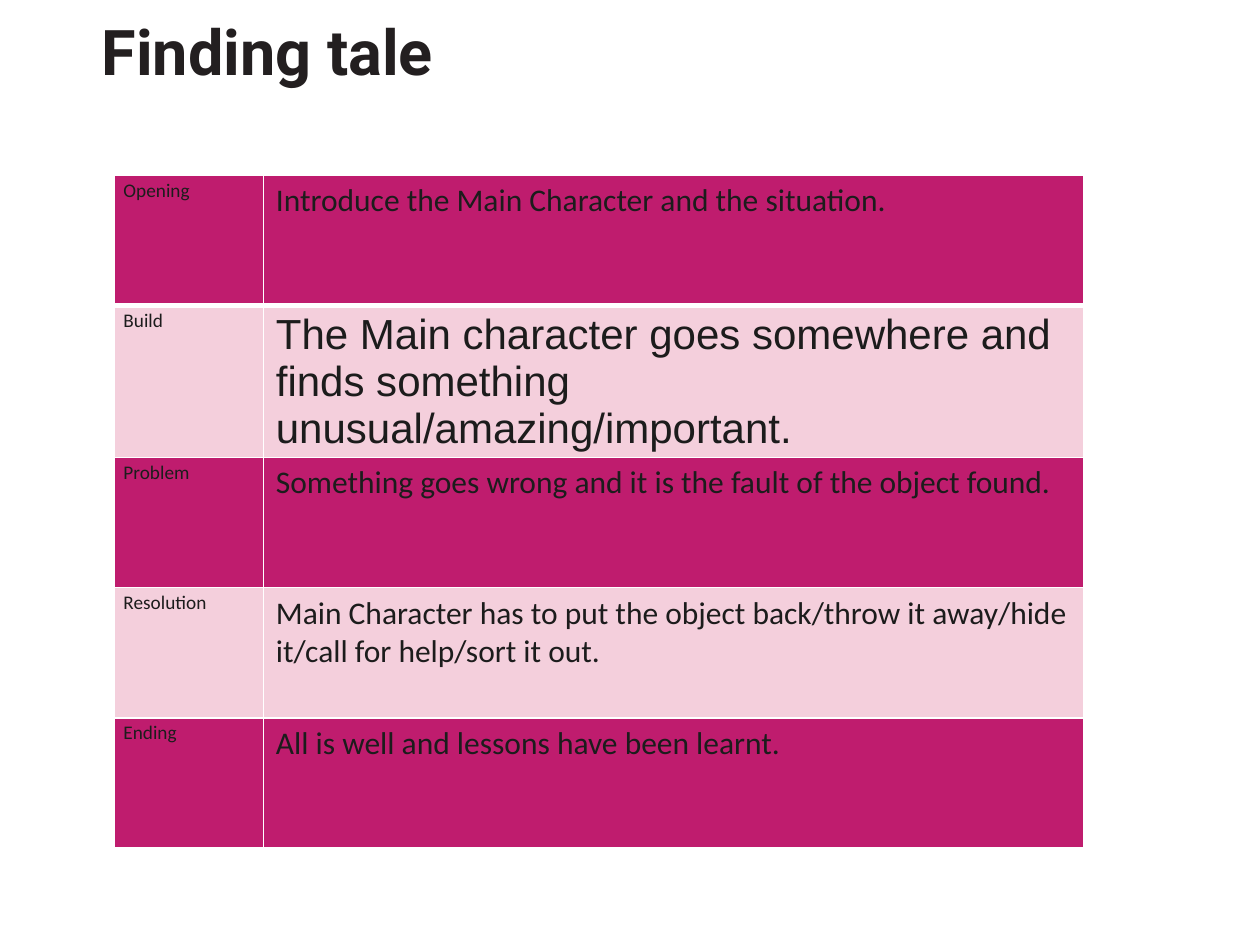
from lxml.etree import SubElement
from pptx import Presentation
from pptx.dml.color import RGBColor
from pptx.enum.shapes import MSO_SHAPE
from pptx.enum.text import MSO_ANCHOR, PP_ALIGN
from pptx.oxml.ns import qn
from pptx.util import Inches, Pt

PINK, PALE, INK, WHITE = "BF1C6E", "F4CFDC", "1C1C1C", "FFFFFF"
STAGES = [
    ("Opening", "Introduce the Main Character and the situation."),
    ("Build", "The Main character goes somewhere and finds something unusual/amazing/important."),
    ("Problem", "Something goes wrong and it is the fault of the object found."),
    ("Resolution", "Main Character has to put the object back/throw it away/hide it/call for help/sort it out."),
    ("Ending", "All is well and lessons have been learnt."),
]


def paint(font, size, name, tint, bold=False):
    font.size, font.name, font.bold = Pt(size), name, bold
    font.color.rgb = RGBColor.from_string(tint)


def edge(cell, low):
    props = cell._tc.get_or_add_tcPr()
    for side, width in (("L", 1), ("R", 1), ("T", 1), ("B", low)):
        line = SubElement(props, qn("a:ln" + side), w=str(Pt(width)))
        fill = SubElement(line, qn("a:solidFill"))
        SubElement(fill, qn("a:srgbClr"), val=WHITE)


def title(slide, box, text):
    shape = slide.shapes.add_shape(MSO_SHAPE.ROUNDED_RECTANGLE, *map(Inches, box))
    shape.adjustments[0] = 0.1
    shape.shadow.inherit = False
    shape.fill.background()
    shape.line.fill.background()
    frame = shape.text_frame
    frame.word_wrap = True
    frame.vertical_anchor = MSO_ANCHOR.MIDDLE
    frame.margin_left = frame.margin_right = Inches(0.25)
    frame.margin_top = frame.margin_bottom = Inches(0.25)
    para = frame.paragraphs[0]
    para.text, para.line_spacing = text, 0.9
    para.alignment = PP_ALIGN.LEFT
    paint(para.font, 36, "Roboto", "231F20", True)


def story(slide, box, stages):
    left, top, width, height = box
    grid = slide.shapes.add_table(len(stages), 2, *map(Inches, box)).table
    grid.first_row = grid.horz_banding = False
    grid.columns[0].width = Inches(1.18)
    grid.columns[1].width = Inches(width - 1.18)
    for row, stage in enumerate(stages):
        build = stage[0] == "Build"
        grid.rows[row].height = Inches(1.21 if build else (height - 1.21) / (len(stages) - 1))
        for col, text in enumerate(stage):
            cell = grid.cell(row, col)
            edge(cell, 1 if row else 3)
            cell.fill.solid()
            cell.fill.fore_color.rgb = RGBColor.from_string(PALE if row % 2 else PINK)
            cell.text = text
            para = cell.text_frame.paragraphs[0]
            if col == 0:
                cell.margin_left = cell.margin_right = Inches(0.07)
                cell.margin_top = cell.margin_bottom = 0
                para.line_spacing = 1.15
                paint(para.font, 11, "Calibri", INK)
            elif build:
                cell.margin_bottom = 0
                paint(para.font, 24, "Arial", INK)
                paint(para.runs[0].font, 24, "Arial", INK)
            else:
                paint(para.font, 18, "Calibri", INK)


def main():
    deck = Presentation()
    deck.slide_width, deck.slide_height = Inches(10), Inches(7.5)
    slide = deck.slides.add_slide(deck.slide_layouts[6])
    title(slide, (0.52, -0.19, 8.93, 1.26), "Finding tale")
    story(slide, (0.91, 1.39, 7.69, 5.34), STAGES)
    deck.save("out.pptx")


if __name__ == "__main__":
    main()
